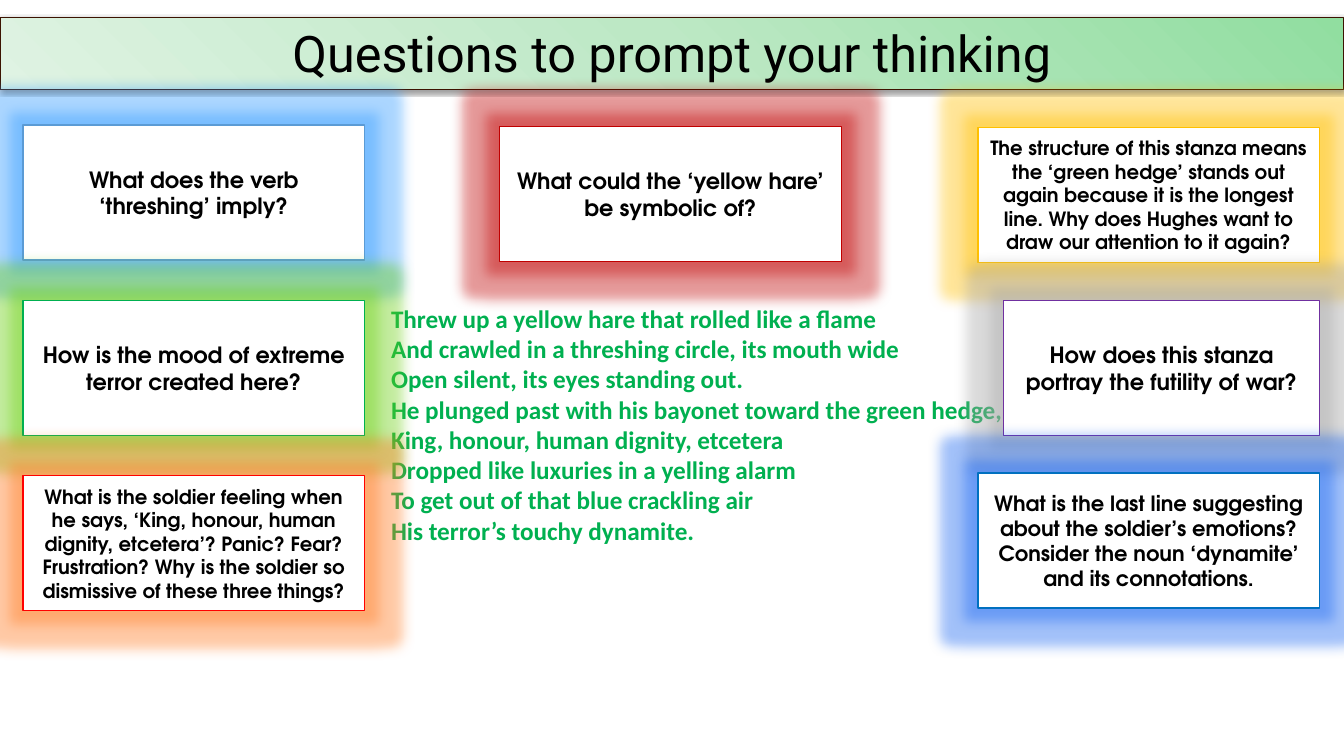
from dataclasses import dataclass

from pptx import Presentation
from pptx.dml.color import RGBColor
from pptx.enum.shapes import MSO_SHAPE
from pptx.enum.text import MSO_ANCHOR, PP_ALIGN
from pptx.oxml import parse_xml
from pptx.oxml.ns import nsdecls, qn
from pptx.util import Pt


@dataclass(frozen=True)
class Theme:
    heading_font: str = "Roboto"
    question_font: str = "TeX Gyre Adventor"
    poem_font: str = "Calibri"
    heading_size: int = 36
    poem_size: int = 18
    large: int = 16
    medium: int = 15
    small: int = 14
    ink: str = "000000"
    paper: str = "FFFFFF"
    poem: str = "00B050"
    banner_line: str = "3C1301"
    banner_stops: tuple = ((0, "91DEA0"), (50, "BDE8C5"), (100, "DFF3E3"))
    # (outline, glow)
    sky: tuple = ("5B9BD5", "2E99FF")
    green: tuple = ("00B050", "6BD010")
    orange: tuple = ("FF0000", "FF7A20")
    yellow: tuple = ("FFC000", "FFC000")
    grey: tuple = ("7030A0", "A5A5A5")
    blue: tuple = ("0070C0", "1764F1")
    red: tuple = ("C00000", "C00000")


class SlideBuilder:
    def __init__(self, slide, theme):
        self.shapes = slide.shapes
        self.theme = theme

    def add_text(self, p, text, font, size, color, bold=True):
        r = p.add_run()
        r.text = text
        r.font.name = font
        r.font.size = Pt(size)
        r.font.bold = bold
        r.font.color.rgb = RGBColor.from_string(color)

    def box(self, left, top, width, height, line, line_width):
        sp = self.shapes.add_shape(
            MSO_SHAPE.RECTANGLE, Pt(left), Pt(top), Pt(width), Pt(height))
        sp.shadow.inherit = False
        sp.line.color.rgb = RGBColor.from_string(line)
        sp.line.width = Pt(line_width)
        sp.text_frame.word_wrap = True
        sp.text_frame.paragraphs[0].alignment = PP_ALIGN.CENTER
        return sp

    def add_effect(self, sp, tag, attrs, color, alpha):
        effects = sp._element.spPr.find(qn("a:effectLst"))
        effects.append(parse_xml(
            f'<a:{tag} {nsdecls("a")} {attrs}><a:srgbClr val="{color}">'
            f'<a:alpha val="{alpha * 1000}"/></a:srgbClr></a:{tag}>'))

    def banner(self, text, top, width, height):
        """Title bar with a gradient spreading from its top right corner."""
        t = self.theme
        sp = self.box(0, top, width, height, t.banner_line, 0.75)
        stops = "".join(
            f'<a:gs pos="{pos * 1000}"><a:srgbClr val="{color}"/></a:gs>'
            for pos, color in t.banner_stops)
        sp._element.spPr.find(qn("a:prstGeom")).addnext(parse_xml(
            f'<a:gradFill {nsdecls("a")} rotWithShape="1"><a:gsLst>{stops}</a:gsLst>'
            '<a:path path="circle"><a:fillToRect l="100000" b="100000"/></a:path>'
            '</a:gradFill>'))
        self.add_effect(
            sp, "outerShdw",
            f'blurRad="{Pt(3.1)}" dist="{Pt(1.6)}" dir="5400000" rotWithShape="0"',
            t.ink, 38)
        sp.text_frame.vertical_anchor = MSO_ANCHOR.TOP
        self.add_text(sp.text_frame.paragraphs[0], text, t.heading_font,
                      t.heading_size, t.ink, bold=False)

    def poem(self, lines, left, top, width, height):
        t = self.theme
        tf = self.shapes.add_textbox(
            Pt(left), Pt(top), Pt(width), Pt(height)).text_frame
        tf.word_wrap = True
        for i, line in enumerate(lines):
            p = tf.add_paragraph() if i else tf.paragraphs[0]
            self.add_text(p, line, t.poem_font, t.poem_size, t.poem)

    def question(self, text, left, top, width, height, size, colors):
        t = self.theme
        line, glow = colors
        sp = self.box(left, top, width, height, line, 1)
        sp.fill.solid()
        sp.fill.fore_color.rgb = RGBColor.from_string(t.paper)
        self.add_effect(sp, "glow", f'rad="{Pt(18)}"', glow, 40)
        sp.text_frame.vertical_anchor = MSO_ANCHOR.MIDDLE
        self.add_text(sp.text_frame.paragraphs[0], text, t.question_font, size, t.ink)


POEM = (
    "Threw up a yellow hare that rolled like a flame",
    "And crawled in a threshing circle, its mouth wide",
    "Open silent, its eyes standing out.",
    "He plunged past with his bayonet toward the green hedge, "
    "King, honour, human dignity, etcetera",
    "Dropped like luxuries in a yelling alarm",
    "To get out of that blue crackling air",
    "His terror’s touchy dynamite.",
)
CARD_W, CARD_H, NARROW_W = 244, 96.5, 225.5
LEFT, MIDDLE, RIGHT_EDGE = 16.5, 357, 942.5


def main():
    prs = Presentation()
    prs.slide_width, prs.slide_height = Pt(960), Pt(540)
    theme = Theme()
    s = SlideBuilder(prs.slides.add_slide(prs.slide_layouts[6]), theme)

    s.banner("Questions to prompt your thinking", 12.2, 960, 51.8)
    s.poem(POEM, 272.2, 213, 480, 181.5)

    right = RIGHT_EDGE - CARD_W
    questions = (
        ("What does the verb ‘threshing’ imply?",
         LEFT, 89.3, CARD_W, theme.large, theme.sky),
        ("How is the mood of extreme terror created here?",
         LEFT, 214.6, CARD_W, theme.large, theme.green),
        ("What is the soldier feeling when he says, ‘King, honour, human "
         "dignity, etcetera’? Panic? Fear? Frustration? Why is the soldier so "
         "dismissive of these three things?",
         LEFT, 339.8, CARD_W, theme.small, theme.orange),
        ("The structure of this stanza means the ‘green hedge’ stands out "
         "again because it is the longest line. Why does Hughes want to draw "
         "our attention to it again?",
         right, 90.9, CARD_W, theme.small, theme.yellow),
        ("How does this stanza portray the futility of war?",
         RIGHT_EDGE - NARROW_W, 214.6, NARROW_W, theme.large, theme.grey),
        ("What is the last line suggesting about the soldier’s emotions? "
         "Consider the noun ‘dynamite’ and its connotations.",
         right, 337.9, CARD_W, theme.medium, theme.blue),
        ("What could the ‘yellow hare’ be symbolic of?",
         MIDDLE, 90.2, CARD_W, theme.large, theme.red),
    )
    for text, left, top, width, size, colors in questions:
        s.question(text, left, top, width, CARD_H, size, colors)

    prs.save("out.pptx")


if __name__ == "__main__":
    main()
